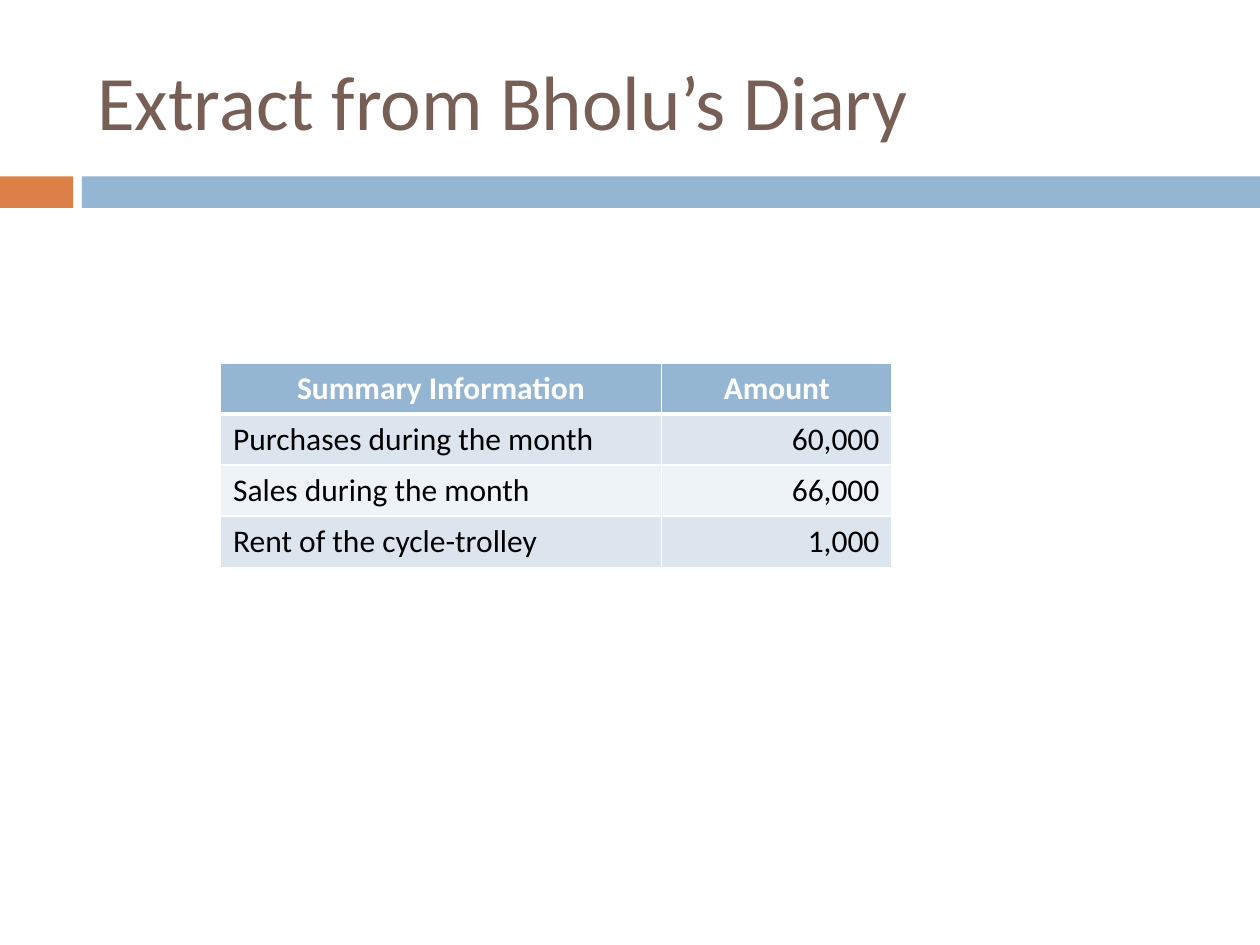
from lxml.etree import SubElement
from pptx import Presentation
from pptx.dml.color import RGBColor
from pptx.enum.shapes import MSO_SHAPE as Shape
from pptx.enum.text import MSO_ANCHOR as Anchor, PP_ALIGN as Align
from pptx.oxml.ns import qn
from pptx.util import Inches, Pt

# Content
TITLE = "Extract from Bholu’s Diary"
ROWS = [
    ("Summary Information", "Amount"),
    ("Purchases during the month", "60,000"),
    ("Sales during the month", "66,000"),
    ("Rent of the cycle-trolley", "1,000"),
]
BARS = [(0, 0.58, "DD8047"), (0.65, 9.35, "94B6D2")]  # left, width, fill
COLUMN_WIDTHS = (3.5, 1.83)
ROW_HEIGHT = 0.405
HEADER_FILL = "94B6D2"
BAND_FILLS = ("EEF3F7", "DCE5EE")  # even rows, odd rows


def set_fill(item, color):
    item.fill.solid()
    item.fill.fore_color.rgb = RGBColor.from_string(color)


def write_text(frame, text, size=18, color="000000", bold=False, align=Align.LEFT):
    paragraph = frame.paragraphs[0]
    paragraph.alignment = align
    run = paragraph.add_run()
    run.text = text
    run.font.name = "Calibri"
    run.font.size = Pt(size)
    run.font.bold = bold
    run.font.color.rgb = RGBColor.from_string(color)


def set_borders(cell, color="FFFFFF", **widths):
    properties = cell._tc.get_or_add_tcPr()
    for side in "LRTB":
        line = SubElement(properties, qn(f"a:ln{side}"), w=str(Pt(widths.get(side, 1))))
        SubElement(SubElement(line, qn("a:solidFill")), qn("a:srgbClr"), val=color)


presentation = Presentation()
presentation.slide_width, presentation.slide_height = Inches(10), Inches(7.5)
slide = presentation.slides.add_slide(presentation.slide_layouts[5])
set_fill(slide.background, "FFFFFF")

# Title
title = slide.shapes.title
title.left, title.top = Inches(0.67), Inches(0.25)
title.width, title.height = Inches(8.92), Inches(1.08)
title.text_frame.vertical_anchor = Anchor.MIDDLE
write_text(title.text_frame, TITLE, size=44, color="775F55")

# Divider bars
for left, width, color in BARS:
    bar = slide.shapes.add_shape(
        Shape.RECTANGLE, Inches(left), Inches(1.4), Inches(width), Inches(0.25))
    set_fill(bar, color)
    bar.line.fill.background()
    bar.shadow.inherit = False

# Summary table
table = slide.shapes.add_table(
    len(ROWS), len(COLUMN_WIDTHS), Inches(1.75), Inches(2.88),
    Inches(sum(COLUMN_WIDTHS)), Inches(ROW_HEIGHT * len(ROWS))).table
for column, width in zip(table.columns, COLUMN_WIDTHS):
    column.width = Inches(width)
for row_index, row in enumerate(ROWS):
    table.rows[row_index].height = Inches(ROW_HEIGHT)
    for column_index, text in enumerate(row):
        cell = table.cell(row_index, column_index)
        if row_index == 0:
            set_borders(cell, B=3)
            set_fill(cell, HEADER_FILL)
            write_text(cell.text_frame, text, color="FFFFFF", bold=True, align=Align.CENTER)
        else:
            set_borders(cell, T=3 if row_index == 1 else 1)
            set_fill(cell, BAND_FILLS[row_index % 2])
            write_text(cell.text_frame, text, align=(Align.LEFT, Align.RIGHT)[column_index])

presentation.save("out.pptx")
